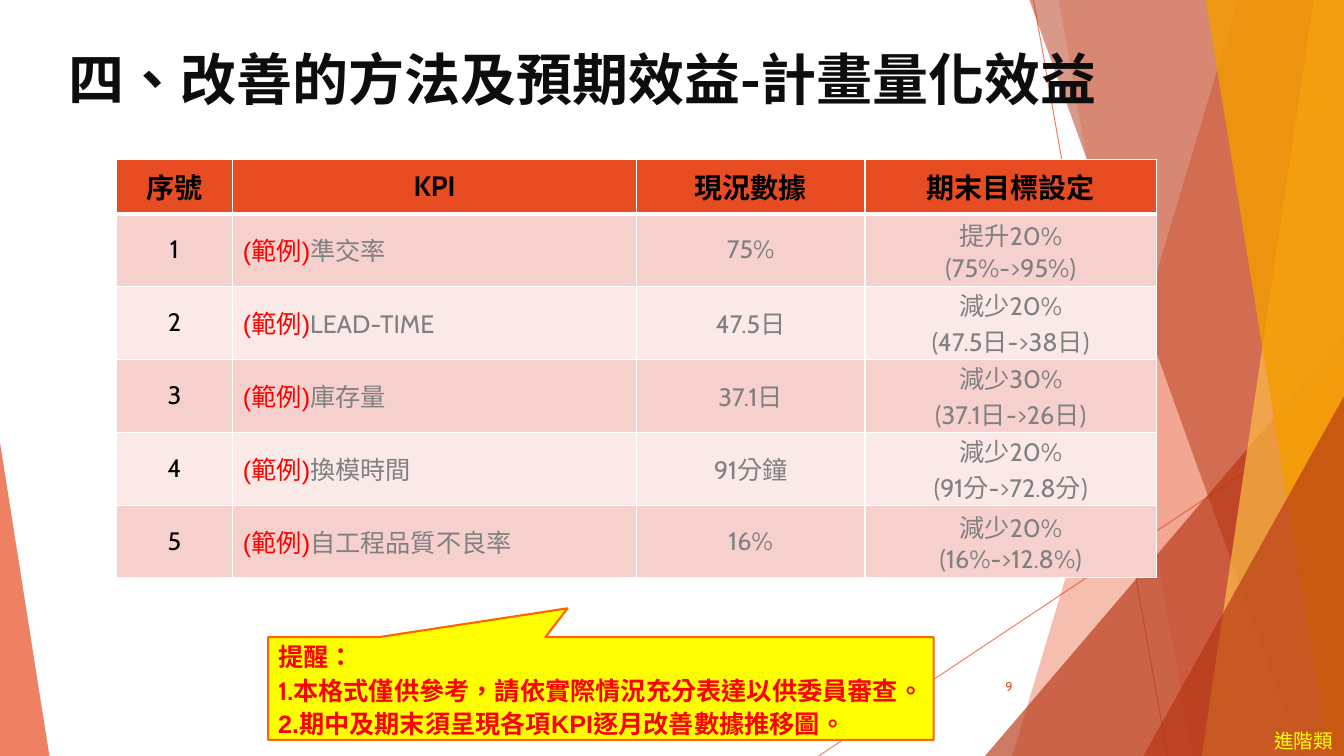
from dataclasses import dataclass

from lxml.etree import SubElement
from pptx import Presentation
from pptx.dml.color import RGBColor
from pptx.enum.shapes import MSO_CONNECTOR, MSO_SHAPE
from pptx.enum.text import MSO_ANCHOR as ANCHOR, MSO_AUTO_SIZE, PP_ALIGN as ALIGN
from pptx.oxml import parse_xml
from pptx.oxml.ns import nsdecls, qn
from pptx.util import Pt

PX = 9144  # 100 px to the inch
WIDTH, HEIGHT = 1333, 750

ORANGE = RGBColor(0xE8, 0x4C, 0x22)
RUST = RGBColor(0xB5, 0x35, 0x13)
GOLD = RGBColor(0xFF, 0xBD, 0x47)
AMBER = RGBColor(0xF4, 0x9D, 0x00)
YELLOW = RGBColor(0xFF, 0xFF, 0x00)
CALLOUT_EDGE = RGBColor(0xFF, 0x66, 0x00)
RED = RGBColor(0xFF, 0x00, 0x00)
GREY = RGBColor(0x80, 0x80, 0x80)
BLACK = RGBColor(0x00, 0x00, 0x00)
TITLE_INK = RGBColor(0x0D, 0x0D, 0x0D)
PINK = RGBColor(0xF6, 0xD0, 0xCD)
PALE_PINK = RGBColor(0xFB, 0xE9, 0xE8)

CJK = "Noto Sans CJK SC"


@dataclass
class Band:
    """Full-height strip between a slanting left edge and the slide's right side."""
    top_x: int
    bottom_x: int
    color: RGBColor
    opacity: int


@dataclass
class Wedge:
    box: tuple[int, int, int, int]
    apex: int
    color: RGBColor
    opacity: int


@dataclass
class Ray:
    start: tuple[int, int]
    end: tuple[int, int]


@dataclass
class Style:
    size: float
    color: RGBColor
    name: str = "Cabin"
    bold: bool = False


@dataclass
class Kpi:
    topic: str
    current: str
    change: str
    span: str


BACKDROP = [
    Ray((1025, 0), (1158, 750)),
    Ray((1333, 403), (812, 750)),
    Band(1228, 1004, ORANGE, 36),
    Band(1050, 1183, ORANGE, 20),
    Wedge((977, 333, 356, 417), 1, RUST, 66),
    Band(1021, 1291, RUST, 50),
    Band(1303, 1192, GOLD, 70),
    Band(1196, 1318, AMBER, 80),
    Wedge((1134, 393, 199, 357), 1, RUST, 66),
    Wedge((0, 439, 49, 311), 0, ORANGE, 70),
]

HEADINGS = ["序號", "KPI", "現況數據", "期末目標設定"]
COLUMN_WIDTHS = [116, 400, 227, 289]
HEADER_HEIGHT, ROW_HEIGHT = 54, 72
KPIS = [
    Kpi("準交率", "75%", "提升20%", "(75%->95%)"),
    Kpi("LEAD-TIME", "47.5日", "減少20%", "(47.5日->38日)"),
    Kpi("庫存量", "37.1日", "減少30%", "(37.1日->26日)"),
    Kpi("換模時間", "91分鐘", "減少20%", "(91分->72.8分)"),
    Kpi("自工程品質不良率", "16%", "減少20%", "(16%->12.8%)"),
]


def emu(*lengths: int) -> list[int]:
    return [length * PX for length in lengths]


def set_opacity(holder, percent: int) -> None:
    for color in holder.iter(qn("a:srgbClr")):
        SubElement(color, qn("a:alpha"), val=str(percent * 1000))


def write(paragraph, text: str, style: Style, align=ALIGN.LEFT) -> None:
    paragraph.alignment = align
    run = paragraph.add_run()
    run.text = text
    formats = {"size": Pt(style.size), "bold": style.bold, "name": style.name}
    for attribute, value in formats.items():
        setattr(run.font, attribute, value)
    run.font.color.rgb = style.color
    properties = run.font._element
    properties.set("lang", "zh-TW")
    SubElement(properties, qn("a:ea"), typeface=CJK)


def draw_ray(shapes, ray: Ray) -> None:
    line = shapes.add_connector(MSO_CONNECTOR.STRAIGHT, *emu(*ray.start, *ray.end))
    line.line.color.rgb = ORANGE
    line.line.width = Pt(0.75)
    properties = line.element.spPr
    set_opacity(properties, 70)
    SubElement(properties, qn("a:effectLst"))


def draw_facet(shapes, facet: Band | Wedge) -> None:
    if isinstance(facet, Band):
        outline = shapes.build_freeform(facet.top_x, 0, scale=PX)
        outline.add_line_segments(
            [(WIDTH, 0), (WIDTH, HEIGHT), (facet.bottom_x, HEIGHT)], close=True)
        panel = outline.convert_to_shape()
    else:
        panel = shapes.add_shape(MSO_SHAPE.ISOSCELES_TRIANGLE, *emu(*facet.box))
        panel.adjustments[0] = facet.apex
    panel.shadow.inherit = False
    panel.line.fill.background()
    panel.fill.solid()
    panel.fill.fore_color.rgb = facet.color
    set_opacity(panel.element.spPr, facet.opacity)


def format_cell(cell, fill: RGBColor, edges: dict[str, float]) -> None:
    cell.vertical_anchor = ANCHOR.MIDDLE
    properties = cell._tc.get_or_add_tcPr()
    for side, points in edges.items():
        properties.append(parse_xml(
            f'<a:ln{side} {nsdecls("a")} w="{Pt(points)}"><a:solidFill>'
            f'<a:srgbClr val="FFFFFF"/></a:solidFill></a:ln{side}>'))
    cell.fill.solid()
    cell.fill.fore_color.rgb = fill


def draw_table(shapes) -> None:
    height = HEADER_HEIGHT + ROW_HEIGHT * len(KPIS)
    table = shapes.add_table(len(KPIS) + 1, len(HEADINGS),
                             *emu(115, 158, sum(COLUMN_WIDTHS), height)).table
    for column, width in zip(table.columns, COLUMN_WIDTHS):
        column.width = width * PX
    for index, row in enumerate(table.rows):
        row.height = (ROW_HEIGHT if index else HEADER_HEIGHT) * PX
        fill = (PINK if index % 2 else PALE_PINK) if index else ORANGE
        edges = {"L": 1, "R": 1, "T": 1 if index != 1 else 3, "B": 1 if index else 3}
        for cell in row.cells:
            format_cell(cell, fill, edges)

    for cell, heading in zip(table.rows[0].cells, HEADINGS):
        write(cell.text_frame.paragraphs[0], heading,
              Style(20, BLACK, bold=True), ALIGN.CENTER)
    value = Style(18, GREY)
    for index, kpi in enumerate(KPIS, start=1):
        number, topic, current, target = table.rows[index].cells
        write(number.text_frame.paragraphs[0], str(index), Style(18, BLACK), ALIGN.CENTER)
        write(topic.text_frame.paragraphs[0], "(範例)", Style(18, RED, "Arial"))
        write(topic.text_frame.paragraphs[0], kpi.topic, value)
        write(current.text_frame.paragraphs[0], kpi.current, value, ALIGN.CENTER)
        target.margin_top = target.margin_bottom = 0
        write(target.text_frame.paragraphs[0], kpi.change, value, ALIGN.CENTER)
        write(target.text_frame.add_paragraph(), kpi.span, value, ALIGN.CENTER)


def draw_reminder(shapes) -> None:
    reminder = shapes.add_shape(MSO_SHAPE.RECTANGULAR_CALLOUT, *emu(266, 632, 660, 102))
    reminder.shadow.inherit = False
    reminder.adjustments[0], reminder.adjustments[1] = -0.05, -0.78
    reminder.fill.solid()
    reminder.fill.fore_color.rgb = YELLOW
    reminder.line.color.rgb = CALLOUT_EDGE
    reminder.line.width = Pt(1.5)
    frame = reminder.text_frame
    frame.word_wrap = True
    frame.vertical_anchor = ANCHOR.MIDDLE
    advice = [("提醒：", "Cabin"),
              ("1.本格式僅供參考，請依實際情況充分表達以供委員審查。", "Cabin"),
              ("2.期中及期末須呈現各項KPI逐月改善數據推移圖。", "Arial")]
    for index, (text, font_name) in enumerate(advice):
        paragraph = frame.add_paragraph() if index else frame.paragraphs[0]
        paragraph.line_spacing = Pt(24)
        write(paragraph, text, Style(18, RED, font_name, True))


def main() -> None:
    deck = Presentation()
    deck.slide_width, deck.slide_height = emu(WIDTH, HEIGHT)
    slide = deck.slides.add_slide(deck.slide_layouts[5])
    shapes = slide.shapes

    # Faceted backdrop
    for part in BACKDROP:
        (draw_ray if isinstance(part, Ray) else draw_facet)(shapes, part)

    # Category tag in the corner
    category = shapes.add_textbox(*emu(1254, 714, 79, 36)).text_frame
    category.word_wrap = False
    category.paragraphs[0].line_spacing = 1.2
    write(category.paragraphs[0], "進階類", Style(14, YELLOW, CJK))

    # Title, brought in front of the backdrop
    title = shapes.title
    title.left, title.top, title.width, title.height = emu(58, 39, 1110, 77)
    title.text_frame.auto_size = MSO_AUTO_SIZE.NONE
    title.text_frame.vertical_anchor = ANCHOR.MIDDLE
    write(title.text_frame.paragraphs[0], "四、改善的方法及預期效益-計畫量化效益",
          Style(40, TITLE_INK, CJK, True))
    title.element.getparent().append(title.element)

    draw_table(shapes)

    # Page number
    page = shapes.add_textbox(*emu(939, 661, 75, 40)).text_frame
    page.word_wrap = True
    page.vertical_anchor = ANCHOR.MIDDLE
    write(page.paragraphs[0], "9", Style(9, ORANGE), ALIGN.RIGHT)

    draw_reminder(shapes)
    deck.save("out.pptx")


if __name__ == "__main__":
    main()
